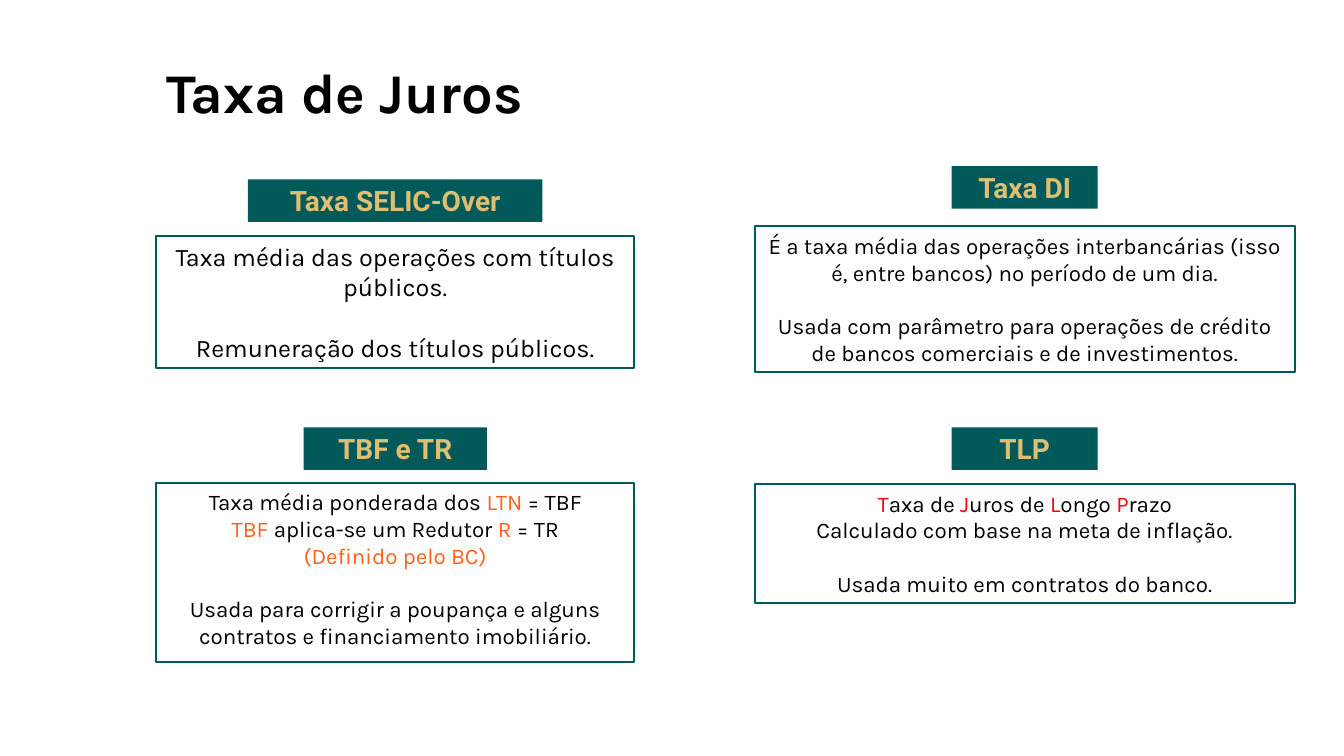
from dataclasses import dataclass
from typing import NamedTuple

import pptx
import pptx.dml.color
import pptx.enum.shapes
import pptx.enum.text
import pptx.util
from pptx.dml.color import RGBColor
from pptx.util import Cm

BLACK = RGBColor(0x00, 0x00, 0x00)
TEAL = RGBColor(0x02, 0x59, 0x59)
GOLD = RGBColor(0xDF, 0xBE, 0x71)
ORANGE = RGBColor(0xFF, 0x60, 0x1A)
RED = RGBColor(0xFF, 0x00, 0x00)

LEFT_COLUMN = (3.94, 12.04)
RIGHT_COLUMN = (19.02, 13.61)
LABEL_HEIGHT = 1.07


class Run(NamedTuple):
    text: str
    color: RGBColor = BLACK


@dataclass
class Rate:
    """One interest rate: a label centred over a framed description (lengths in cm)."""
    name: str
    column: tuple[float, float]
    label_top: float
    label_width: float
    box_top: float
    box_height: float
    lines: list[list[Run]]
    size: int = 16
    gap: float = 19
    anchor: pptx.enum.text.MSO_ANCHOR = pptx.enum.text.MSO_ANCHOR.MIDDLE


RATES = [
    Rate("Taxa SELIC-Over", LEFT_COLUMN, 4.52, 7.42, 5.94, 3.33, [
        [Run("Taxa média das operações com títulos públicos.")],
        [Run("Remuneração dos títulos públicos.")],
    ], size=18, gap=21.5),
    Rate("Taxa DI", RIGHT_COLUMN, 4.19, 3.68, 5.69, 3.68, [
        [Run("É a taxa média das operações interbancárias (isso é, entre bancos) "
             "no período de um dia.")],
        [Run("Usada com parâmetro para operações de crédito de bancos comerciais "
             "e de investimentos.")],
    ]),
    Rate("TBF e TR", LEFT_COLUMN, 10.77, 4.62, 12.17, 4.52, [
        [Run("Taxa média ponderada dos "), Run("LTN ", ORANGE), Run("= TBF")],
        [Run("TBF ", ORANGE), Run("aplica-se um Redutor "), Run("R ", ORANGE), Run("= TR")],
        [Run("(Definido pelo BC)", ORANGE)],
        [Run("Usada para corrigir a poupança e alguns contratos e financiamento "
             "imobiliário.")],
    ], anchor=pptx.enum.text.MSO_ANCHOR.TOP),
    Rate("TLP", RIGHT_COLUMN, 10.77, 3.68, 12.19, 3.0, [
        [Run("T", RED), Run("axa de "), Run("J", RED), Run("uros de "),
         Run("L", RED), Run("ongo "), Run("P", RED), Run("razo")],
        [Run("Calculado com base na meta de inflação.")],
        [Run("Usada muito em contratos do banco.")],
    ]),
]


def add_rectangle(slide: pptx.slide.Slide, left: float, top: float,
                  width: float, height: float) -> pptx.shapes.autoshape.Shape:
    shape = slide.shapes.add_shape(pptx.enum.shapes.MSO_SHAPE.RECTANGLE,
                                   Cm(left), Cm(top), Cm(width), Cm(height))
    shape.shadow.inherit = False
    shape.text_frame.word_wrap = True
    return shape


def format_paragraph(paragraph: pptx.text.text._Paragraph, font_name: str, size: int,
                     color: RGBColor, bold: bool = False,
                     alignment: pptx.enum.text.PP_ALIGN = pptx.enum.text.PP_ALIGN.CENTER) -> None:
    paragraph.alignment = alignment
    paragraph.font.name = font_name
    paragraph.font.size = pptx.util.Pt(size)
    paragraph.font.bold = bold
    paragraph.font.color.rgb = color


def add_title(slide: pptx.slide.Slide) -> None:
    title = slide.shapes.title
    title.left, title.top, title.width, title.height = Cm(3.94), Cm(1.32), Cm(26.31), Cm(1.96)
    title.text_frame.text = "Taxa de Juros"
    title.text_frame.vertical_anchor = pptx.enum.text.MSO_ANCHOR.TOP
    title.text_frame.auto_size = pptx.enum.text.MSO_AUTO_SIZE.NONE
    format_paragraph(title.text_frame.paragraphs[0], "Karla", 40, BLACK, True,
                     pptx.enum.text.PP_ALIGN.LEFT)


def add_label(slide: pptx.slide.Slide, rate: Rate) -> None:
    column_left, column_width = rate.column
    left = column_left + (column_width - rate.label_width) / 2
    label = add_rectangle(slide, left, rate.label_top, rate.label_width, LABEL_HEIGHT)
    label.fill.solid()
    label.fill.fore_color.rgb = TEAL
    label.line.fill.background()
    frame = label.text_frame
    frame.margin_left = frame.margin_right = 0
    frame.margin_top = frame.margin_bottom = Cm(0.1)
    frame.text = rate.name
    format_paragraph(frame.paragraphs[0], "Roboto", 20, GOLD, True)


def add_description(slide: pptx.slide.Slide, rate: Rate) -> None:
    """Draw the framed text, with a gap before its last paragraph."""
    left, width = rate.column
    box = add_rectangle(slide, left, rate.box_top, width, rate.box_height)
    box.fill.background()
    box.line.color.rgb = TEAL
    box.line.width = pptx.util.Pt(1.5)
    frame = box.text_frame
    frame.vertical_anchor = rate.anchor
    for index, line in enumerate(rate.lines):
        paragraph = frame.paragraphs[0] if index == 0 else frame.add_paragraph()
        format_paragraph(paragraph, "Karla", rate.size, BLACK)
        for part in line:
            run = paragraph.add_run()
            run.text = part.text
            if part.color != BLACK:
                run.font.color.rgb = part.color
    paragraph.space_before = pptx.util.Pt(rate.gap)


def main() -> None:
    presentation = pptx.Presentation()
    presentation.slide_width = Cm(33.87)
    presentation.slide_height = Cm(19.05)
    slide = presentation.slides.add_slide(presentation.slide_layouts.get_by_name("Title Only"))
    add_title(slide)
    for rate in RATES:
        add_label(slide, rate)
        add_description(slide, rate)
    presentation.save("out.pptx")


if __name__ == "__main__":
    main()
